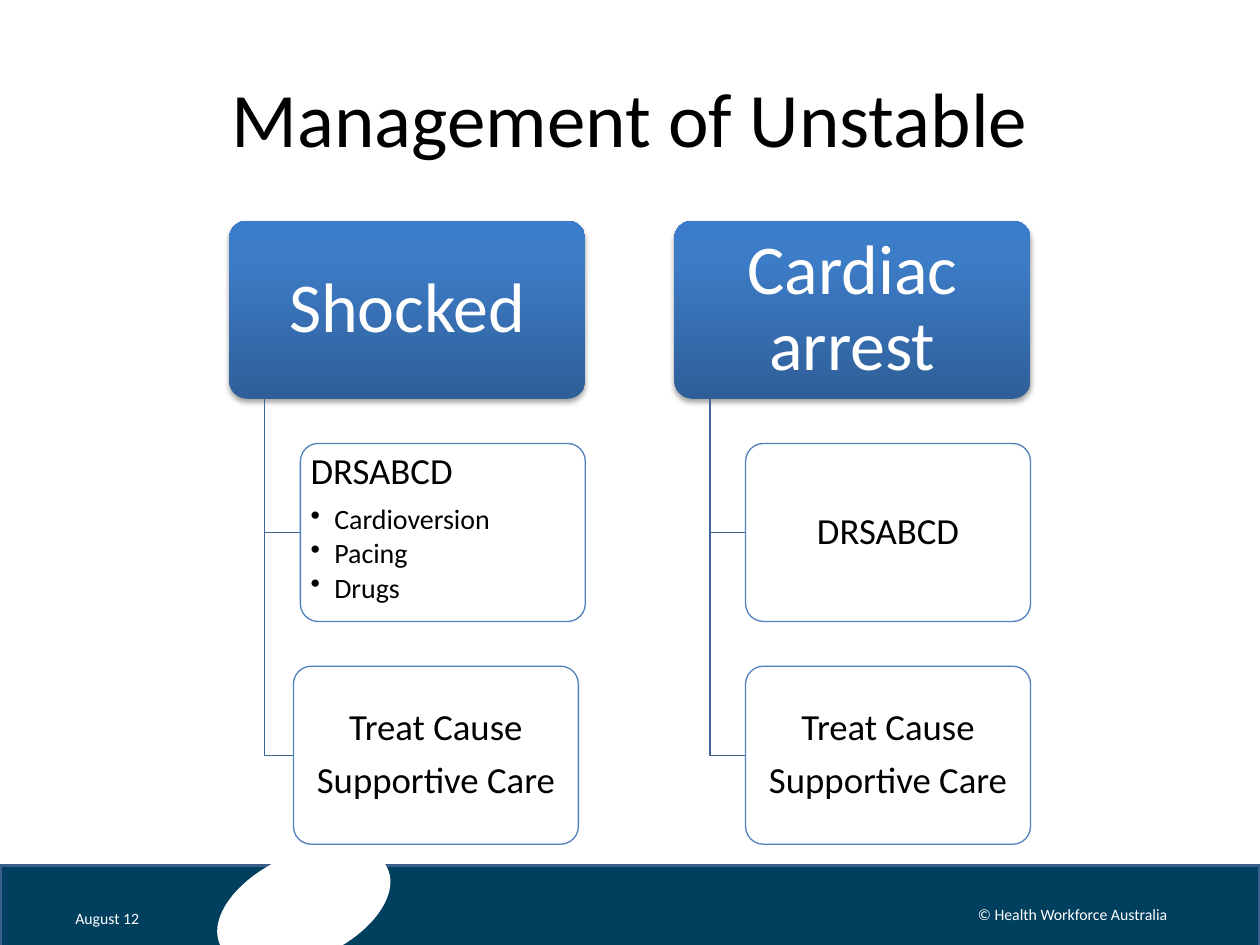
from lxml.etree import SubElement
from pptx import Presentation
from pptx.dml.color import RGBColor
from pptx.enum.shapes import MSO_SHAPE
from pptx.enum.text import MSO_ANCHOR, PP_ALIGN
from pptx.oxml.ns import qn
from pptx.util import Cm, Pt

HUES = {
    "ink": "000000", "paper": "FFFFFF", "band": "003F5E", "rim": "3A5F8C",
    "deep": "2F5F99", "mid": "3D7CC7", "top": "3A7CCB",
    "edge": "4F81BD", "wire": "3F6797",
}
HEAD_W, BOX_H, GAP = 7.18, 3.59, 0.9
STEP = BOX_H + GAP
INDENT = HEAD_W / 5
CARE = ["Treat Cause", "Supportive Care"]


def hue(name):
    return RGBColor.from_string(HUES[name])


def add_node(slide, kind, left, top, width, height, fill=None, line=None, weight=0.75):
    node = slide.shapes.add_shape(kind, Cm(left), Cm(top), Cm(width), Cm(height))
    node.shadow.inherit = False
    if fill:
        node.fill.solid()
        node.fill.fore_color.rgb = hue(fill)
    if line:
        node.line.color.rgb = hue(line)
        node.line.width = Pt(weight)
    else:
        node.line.fill.background()
    return node


def style(para, size, color, align=PP_ALIGN.CENTER):
    para.alignment = align
    para.font.name = "Calibri"
    para.font.size = Pt(size)
    para.font.color.rgb = hue(color)


def set_frame(shape, pad_x, pad_y, anchor=MSO_ANCHOR.MIDDLE):
    frame = shape.text_frame
    frame.word_wrap = True
    frame.vertical_anchor = anchor
    frame.margin_left = frame.margin_right = Cm(pad_x)
    frame.margin_top = frame.margin_bottom = Cm(pad_y)
    return frame


def space(para, size, share):
    para.line_spacing = 0.9
    para.space_after = Pt(size * share)


def add_bullet(para):
    props = para._p.get_or_add_pPr()
    props.set("marL", str(Cm(0.48)))
    props.set("indent", str(-Cm(0.48)))
    SubElement(props, qn("a:buChar"), char="•")


def add_head(slide, left, top, text):
    head = add_node(slide, MSO_SHAPE.ROUNDED_RECTANGLE, left, top, HEAD_W, BOX_H)
    head.adjustments[0] = 0.1
    head.fill.gradient()
    head.fill.gradient_angle = 90
    stops = head._element.spPr.find(qn("a:gradFill")).find(qn("a:gsLst"))
    SubElement(stops, qn("a:gs"), pos="100000")
    for stop, spot, name in zip(head.fill.gradient_stops, (0, 0.8, 1), ("deep", "mid", "top")):
        stop.position = spot
        stop.color.rgb = hue(name)
    effects = head._element.spPr.find(qn("a:effectLst"))
    shade = SubElement(effects, qn("a:outerShdw"), blurRad="40000", dist="23000",
                       dir="5400000", rotWithShape="0")
    black = SubElement(shade, qn("a:srgbClr"), val=HUES["ink"])
    SubElement(black, qn("a:alpha"), val="35000")
    para = set_frame(head, 0.2, 0.15).paragraphs[0]
    para.text = text
    space(para, 40, 0.35)
    style(para, 40, "paper")


def add_elbow(slide, left, top, width, height):
    build = slide.shapes.build_freeform(Cm(left), Cm(top))
    build.add_line_segments(
        [(Cm(left), Cm(top + height)), (Cm(left + width), Cm(top + height))], close=False)
    elbow = build.convert_to_shape()
    elbow.shadow.inherit = False
    elbow.fill.background()
    elbow.line.color.rgb = hue("wire")
    elbow.line.width = Pt(0.75)


def add_child(slide, left, top, lines, points):
    box = add_node(slide, MSO_SHAPE.ROUNDED_RECTANGLE, left, top,
                   HEAD_W - INDENT, BOX_H, "paper", "edge")
    box.adjustments[0] = 0.1
    color = box._element.spPr.find(qn("a:solidFill"))[0]
    SubElement(color, qn("a:alpha"), val="90000")
    anchor = MSO_ANCHOR.TOP if points else MSO_ANCHOR.MIDDLE
    align = PP_ALIGN.LEFT if points else PP_ALIGN.CENTER
    frame = set_frame(box, 0.1, 0.08, anchor)
    for i, text in enumerate(lines + points):
        para = frame.add_paragraph() if i else frame.paragraphs[0]
        para.text = text
        point = i >= len(lines)
        size, share = (16, 0.15) if point else (21, 0.35)
        space(para, size, share)
        if point:
            para.level = 1
            add_bullet(para)
        style(para, size, "ink", align)


def add_branch(slide, left, top, title, items):
    add_head(slide, left, top, title)
    for row, (lines, points, shift) in enumerate(items, 1):
        child = left + INDENT + shift
        add_elbow(slide, left + INDENT / 2, top + BOX_H,
                  INDENT / 2 + shift, row * STEP - BOX_H / 2)
        add_child(slide, child, top + row * STEP, lines, points)


def add_title(slide, left, top, width, height):
    title = slide.shapes.title
    title.left, title.top = Cm(left), Cm(top)
    title.width, title.height = Cm(width), Cm(height)
    title.text_frame.text = "Management of Unstable"
    title.text_frame.vertical_anchor = MSO_ANCHOR.MIDDLE
    style(title.text_frame.paragraphs[0], 44, "ink")


def add_note(slide, left, top, width, height, text, align):
    note = slide.shapes.add_textbox(Cm(left), Cm(top), Cm(width), Cm(height))
    para = set_frame(note, 0.25, 0.13).paragraphs[0]
    para.text = text
    style(para, 9, "paper", align)


def add_footer(slide, left, top, width, height):
    add_node(slide, MSO_SHAPE.RECTANGLE, left, top, width, height, "band", "rim", 2)
    oval = add_node(slide, MSO_SHAPE.OVAL, left + 4.27, top - 0.23, 3.71, 2.11, "paper")
    oval.rotation = 335.7
    add_note(slide, left + 1.27, top + 0.69, 2.03, 0.74, "August 12", PP_ALIGN.LEFT)
    add_note(slide, left + 18.9, top + 0.48, 5.44, 1.02,
             "© Health Workforce Australia", PP_ALIGN.CENTER)


def main():
    deck = Presentation()
    deck.slide_width, deck.slide_height = Cm(25.4), Cm(19.05)
    slide = deck.slides.add_slide(deck.slide_layouts[5])
    add_footer(slide, 0, 17.45, 25.4, 1.65)
    add_title(slide, 1.27, 0.76, 22.86, 3.18)
    drugs = ["Cardioversion", "Pacing", "Drugs"]
    branches = [
        ("Shocked", [(["DRSABCD"], drugs, 0), (CARE, [], -0.14)]),
        ("Cardiac arrest", [(["DRSABCD"], [], 0), (CARE, [], 0)]),
    ]
    for i, (title, items) in enumerate(branches):
        add_branch(slide, 4.62 + i * HEAD_W * 1.25, 4.45, title, items)
    deck.save("out.pptx")


if __name__ == "__main__":
    main()
